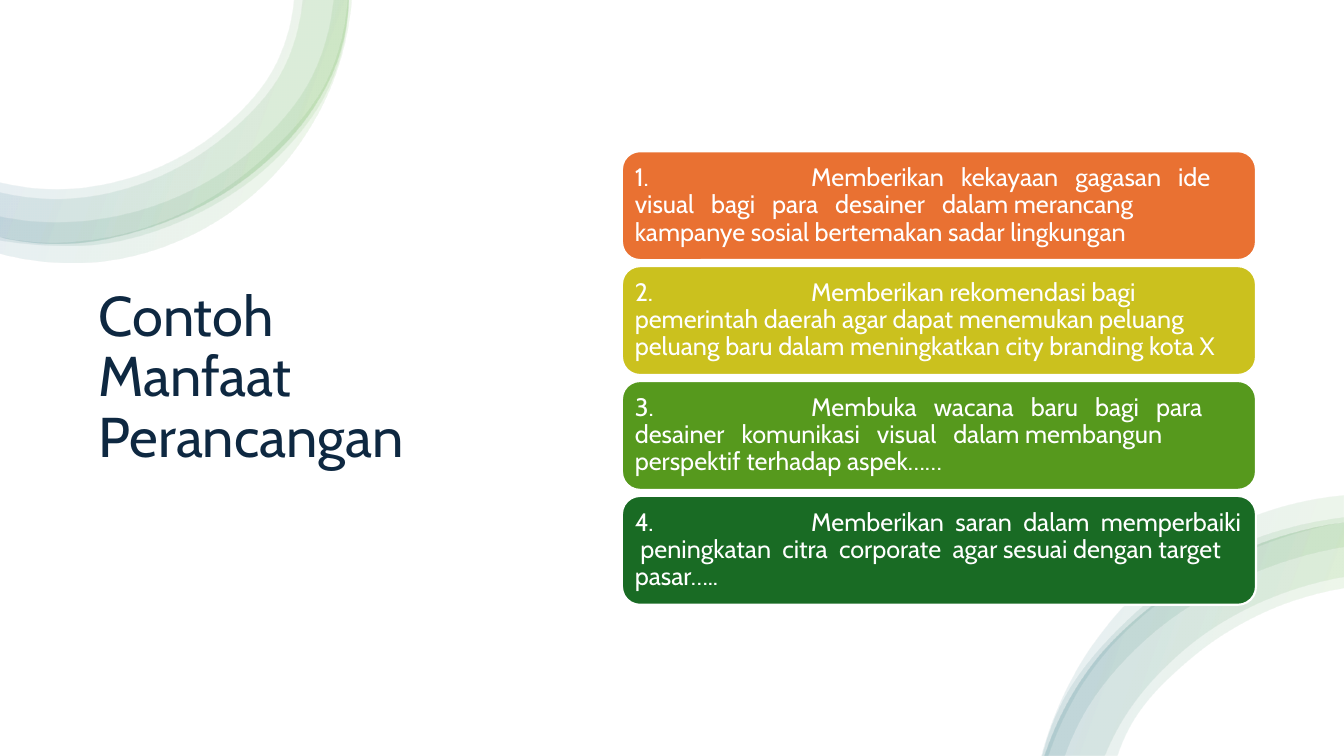
"""Build a slide of four example benefits beside a title, with ribbon corners."""
from math import dist
from lxml.etree import fromstring
from pptx import Presentation
from pptx.dml.color import RGBColor
from pptx.enum.shapes import MSO_SHAPE as Shape
from pptx.enum.text import MSO_ANCHOR as Anchor, PP_ALIGN as Align
from pptx.util import Pt

FONT = "Cabin"
WHITE = RGBColor(0xFF, 0xFF, 0xFF)
NAVY = RGBColor(0x0E, 0x28, 0x41)
ORANGE = RGBColor(0xE9, 0x71, 0x32)
YELLOW = RGBColor(0xCB, 0xC1, 0x1E)
LIME = RGBColor(0x56, 0x99, 0x1D)
GREEN = RGBColor(0x19, 0x6B, 0x24)
LEAF = RGBColor(0x4E, 0xA7, 0x2E)
TEAL = RGBColor(0x15, 0x60, 0x82)

TITLE = "Contoh Manfaat Perancangan"
CARDS = [
    (ORANGE, "1.\t\tMemberikan   kekayaan   gagasan   ide   visual   bagi   para   desainer   "
             "dalam merancang kampanye sosial bertemakan sadar lingkungan"),
    (YELLOW, "2.\t\tMemberikan rekomendasi bagi pemerintah daerah agar dapat menemukan peluang "
             "peluang baru dalam meningkatkan city branding kota X"),
    (LIME, "3.\t\tMembuka   wacana   baru   bagi   para   desainer   komunikasi   visual   "
           "dalam membangun perspektif terhadap aspek……"),
    (GREEN, "4.\t\tMemberikan  saran  dalam  memperbaiki  peningkatan  citra  corporate  "
            "agar sesuai dengan target pasar….."),
]

STOPS = [(2, WHITE), (16, LEAF), (85, TEAL), (100, WHITE)]
ALPHA, ANGLE = 10, 200
TOP_RIM = [(249, 0), (240, 46), (224, 77), (176, 127), (111, 161), (38, 174), (0, 169)]
LOW_RIM = [(746, 540), (783, 471), (830, 427), (888, 393), (960, 373)]
RIBBONS = [
    (TOP_RIM, [(0, 130), (38, 135), (102, 124), (157, 93), (196, 48), (210, 0)]),
    (TOP_RIM, [(0, 137), (38, 142), (104, 130), (161, 97), (202, 50), (216, 0)]),
    ([(249, 0), (235, 62), (193, 117), (135, 155), (66, 174.5), (30, 174.5), (0, 171)],
     [(0, 154), (31, 158), (63, 157), (127, 140), (182, 105), (222, 56), (238, 0)]),
    ([(251, 0), (237, 60), (199, 121), (140, 166), (68, 187), (30, 186.5), (0, 181)],
     [(0, 169), (31, 173), (66, 171), (132, 151), (189, 112), (233, 58), (248, 0)]),
    ([(744, 540), (775, 469), (826, 411), (873, 379), (960, 354)],
     [(960, 373), (903, 389), (846, 418), (783, 475), (749, 540)]),
    (LOW_RIM, [(960, 420), (921, 430), (852, 469), (805, 523), (798, 540)]),
    ([(745, 540), (757, 506), (809, 440), (880, 392), (960, 370)],
     [(960, 391), (890, 412), (822, 454), (773, 513), (761, 540)]),
    (LOW_RIM, [(960, 412), (918, 423), (847, 463), (798, 521), (789, 540)]),
]

WIDE, HIGH = 960, 540
LEFT, TOP, WIDTH, HEIGHT, STEP = 444.24, 108, 452.88, 77.76, 82.08
PAD, TAB = 5.4, 63
SPACE = "http://schemas.openxmlformats.org/drawingml/2006/main"


def curve(knots):
    """Return the three Bezier points of each step of a smooth edge."""
    gaps = [dist(a, b) for a, b in zip(knots, knots[1:])]
    dirs = [((c - a) / gap, (d - b) / gap)
            for (a, b), (c, d), gap in zip(knots, knots[1:], gaps)]
    mids = [tuple((u * h + v * g) / (g + h) for u, v in zip(p, q))
            for p, q, g, h in zip(dirs, dirs[1:], gaps, gaps[1:])]
    first = tuple(2 * u - v for u, v in zip(dirs[0], mids[0]))
    last = tuple(2 * u - v for u, v in zip(dirs[-1], mids[-1]))
    slopes = [first, *mids, last]
    return [(tuple(u + s * gap / 3 for u, s in zip(a, start)),
             tuple(v - s * gap / 3 for v, s in zip(b, stop)), b)
            for a, b, start, stop, gap in zip(knots, knots[1:], slopes, slopes[1:], gaps)]


def blend():
    """Return the sheer gradient fill."""
    stops = "".join(
        f'<a:gs pos="{pos * 1000}"><a:srgbClr val="{tone}">'
        f'<a:alpha val="{ALPHA * 1000}"/></a:srgbClr></a:gs>' for pos, tone in STOPS)
    return fromstring(f'<a:gradFill xmlns:a="{SPACE}"><a:gsLst>{stops}</a:gsLst>'
                      f'<a:lin ang="{ANGLE * 60000}" scaled="0"/></a:gradFill>')


def swap(old, new):
    """Put one element in place of another."""
    old.getparent().replace(old, new)


def ribbon(slide, outer, inner):
    """Draw one band between two edges."""
    dots = [(Pt(x), Pt(y)) for x, y in outer + inner]
    pen = slide.shapes.build_freeform(*dots[0], scale=1.0)
    pen.add_line_segments(dots[1:], close=True)
    band = pen.convert_to_shape()
    band.shadow.inherit = False
    band.line.fill.background()
    band.fill.solid()
    swap(next(band._element.spPr.iter(f"{{{SPACE}}}solidFill")), blend())
    lines = list(band._element.spPr.iter(f"{{{SPACE}}}lnTo"))
    for line, trio in zip(lines, curve(outer) + [None] + curve(inner)):
        if trio:
            spots = "".join(f'<a:pt x="{Pt(x) - band.left}" y="{Pt(y) - band.top}"/>'
                            for x, y in trio)
            swap(line, fromstring(
                f'<a:cubicBezTo xmlns:a="{SPACE}">{spots}</a:cubicBezTo>'))


def write(frame, text, size, tone):
    """Put one left-aligned paragraph in a frame."""
    frame.word_wrap = True
    frame.vertical_anchor = Anchor.MIDDLE
    para = frame.paragraphs[0]
    para.text = text
    para.alignment = Align.LEFT
    para.line_spacing = 0.9
    para.font.name, para.font.size = FONT, Pt(size)
    para.font.color.rgb = tone
    return para


def block(slide, kind, spot, tone):
    """Draw one plain filled shape."""
    box = slide.shapes.add_shape(kind, *(Pt(v) for v in spot))
    box.shadow.inherit = False
    box.fill.solid()
    box.fill.fore_color.rgb = tone
    box.line.fill.background()
    return box


def card(slide, row, tone, text):
    """Draw one numbered card."""
    spot = (LEFT, TOP + row * STEP, WIDTH, HEIGHT)
    box = block(slide, Shape.ROUNDED_RECTANGLE, spot, tone)
    box.line.color.rgb = WHITE
    box.line.width = Pt(1.5)
    frame = box.text_frame
    frame.margin_left = frame.margin_right = Pt(PAD)
    para = write(frame, text, 18, WHITE)
    para._p.get_or_add_pPr().set("defTabSz", str(Pt(TAB)))


def main():
    """Make the deck and save it."""
    deck = Presentation()
    deck.slide_width, deck.slide_height = Pt(WIDE), Pt(HIGH)
    slide = deck.slides.add_slide(deck.slide_layouts[6])
    block(slide, Shape.RECTANGLE, (0, 0, WIDE, HIGH), WHITE)
    title = slide.shapes.add_textbox(Pt(63.36), Pt(121.68), Pt(267.84), Pt(297.36))
    write(title.text_frame, TITLE, 40, NAVY)
    for outer, inner in RIBBONS:
        ribbon(slide, outer, inner)
    for row, (tone, text) in enumerate(CARDS):
        card(slide, row, tone, text)
    deck.save("out.pptx")


if __name__ == "__main__":
    main()
